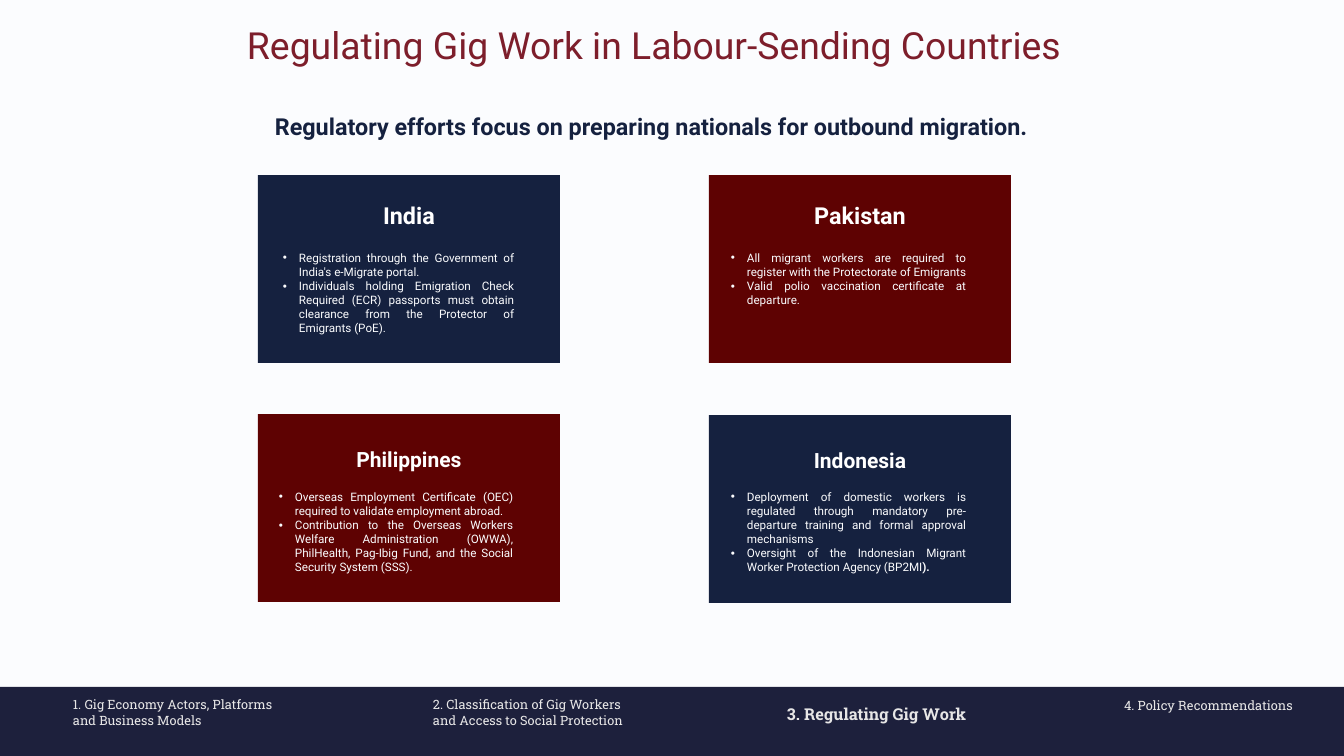
from lxml import etree
from pptx import Presentation
from pptx.dml.color import RGBColor
from pptx.enum.shapes import MSO_SHAPE
from pptx.enum.text import MSO_ANCHOR, PP_ALIGN
from pptx.oxml.ns import qn
from pptx.util import Emu, Pt

RECTANGLE = MSO_SHAPE.RECTANGLE
TOP = MSO_ANCHOR.TOP
LEFT, CENTER, JUSTIFY = PP_ALIGN.LEFT, PP_ALIGN.CENTER, PP_ALIGN.JUSTIFY
EMU_PER_PX = 914400 / 84
COLORS = {
    "paper": "FBFCFE", "title": "7D1E2B", "navy": "15213F", "maroon": "5E0202",
    "footer": "1D203C", "footer_text": "E7E6E6", "white": "FFFFFF",
}


def px(*lengths):
    return [Emu(round(length * EMU_PER_PX)) for length in lengths]


def write(shape, lines, size, color, font="Roboto", bold=False, align=LEFT,
          insets=(0, 0, 0, 0), wrap=True, bullet=False, spacing=None):
    frame = shape.text_frame
    frame.word_wrap = wrap
    frame.vertical_anchor = TOP
    (frame.margin_left, frame.margin_top,
     frame.margin_right, frame.margin_bottom) = px(*insets)
    for index, line in enumerate(lines):
        paragraph = frame.add_paragraph() if index else frame.paragraphs[0]
        paragraph.alignment = align
        if spacing:
            paragraph.line_spacing = Pt(spacing)
        if bullet:
            indent = px(16)[0]
            properties = paragraph._p.get_or_add_pPr()
            properties.set("marL", str(indent))
            properties.set("indent", str(-indent))
            etree.SubElement(properties, qn("a:buFont")).set("typeface", "Arial")
            etree.SubElement(properties, qn("a:buChar")).set("char", "•")
        paragraph.font.name = font
        paragraph.font.size = Pt(size)
        paragraph.font.bold = bold
        paragraph.font.color.rgb = RGBColor.from_string(COLORS[color])
        paragraph.add_run().text = line


presentation = Presentation()
presentation.slide_width, presentation.slide_height = px(1344, 756)
slide = presentation.slides.add_slide(presentation.slide_layouts[6])
slide.background.fill.solid()
slide.background.fill.fore_color.rgb = RGBColor.from_string(COLORS["paper"])

title = slide.shapes.add_textbox(*px(247, 34, 816, 29))
write(title, ["Regulating Gig Work in Labour-Sending Countries"], 32, "title",
      wrap=False, spacing=28)

subtitle = slide.shapes.add_textbox(*px(253, 108, 797, 37))
write(subtitle, ["Regulatory efforts focus on preparing nationals for outbound migration."],
      20, "navy", bold=True, align=CENTER, insets=(8, 4, 8, 4))

rectangles = [(0, 687, 1344, 69, "footer")]
countries = [
    ("India", 258, 175, "navy", 20, 26, (275, 247, 247), [
        "Registration through the Government of India's e-Migrate portal.",
        "Individuals holding Emigration Check Required (ECR) passports must obtain "
        "clearance from the Protector of Emigrants (PoE).",
    ]),
    ("Pakistan", 709, 175, "maroon", 20, 26, (723, 247, 251), [
        "All migrant workers are required to register with the Protectorate of Emigrants",
        "Valid polio vaccination certificate at departure.",
    ]),
    ("Philippines", 258, 414, "maroon", 18, 32, (271, 486, 250), [
        "Overseas Employment Certificate (OEC) required to validate employment abroad.",
        "Contribution to the Overseas Workers Welfare Administration (OWWA), "
        "PhilHealth, Pag-Ibig Fund, and the Social Security System (SSS).",
    ]),
    ("Indonesia", 709, 415, "navy", 18, 32, (723, 486, 251), [
        "Deployment of domestic workers is regulated through mandatory "
        "pre-departure training and formal approval mechanisms",
        "Oversight of the Indonesian Migrant Worker Protection Agency (BP2MI",
    ]),
]
rectangles += [(left, top, 302, 188, fill) for _, left, top, fill, *_ in countries]

panels = []
for left, top, width, height, fill in rectangles:
    panel = slide.shapes.add_shape(RECTANGLE, *px(left, top, width, height))
    panel.shadow.inherit = False
    panel.fill.solid()
    panel.fill.fore_color.rgb = RGBColor.from_string(COLORS[fill])
    panel.line.fill.background()
    panels.append(panel)

for card, country in zip(panels[1:], countries):
    name, _, _, _, size, heading_inset, (left, top, width), measures = country
    write(card, [name], size, "white", bold=True, align=CENTER,
          insets=(8, heading_inset, 8, 4))
    details = slide.shapes.add_textbox(*px(left, top, width, 93))
    write(details, measures, 10, "paper", align=JUSTIFY,
          insets=(8, 4, 8, 4), bullet=True)

closing = details.text_frame.paragraphs[-1].add_run()
closing.text = ")."
closing.font.bold = True

sections = [
    (73, 697, 212, 11, False, ["1. Gig Economy Actors, Platforms", "and Business Models"]),
    (433, 697, 204, 11, False, ["2. Classification of Gig Workers",
                                "and Access to Social Protection"]),
    (787, 704, 187, 14, True, ["3. Regulating Gig Work"]),
    (1124, 698, 174, 11, False, ["4. Policy Recommendations"]),
]
for left, top, width, size, current, lines in sections:
    section = slide.shapes.add_textbox(*px(left, top, width, 34))
    write(section, lines, size, "footer_text", font="Roboto Slab", bold=current)

presentation.save("out.pptx")
